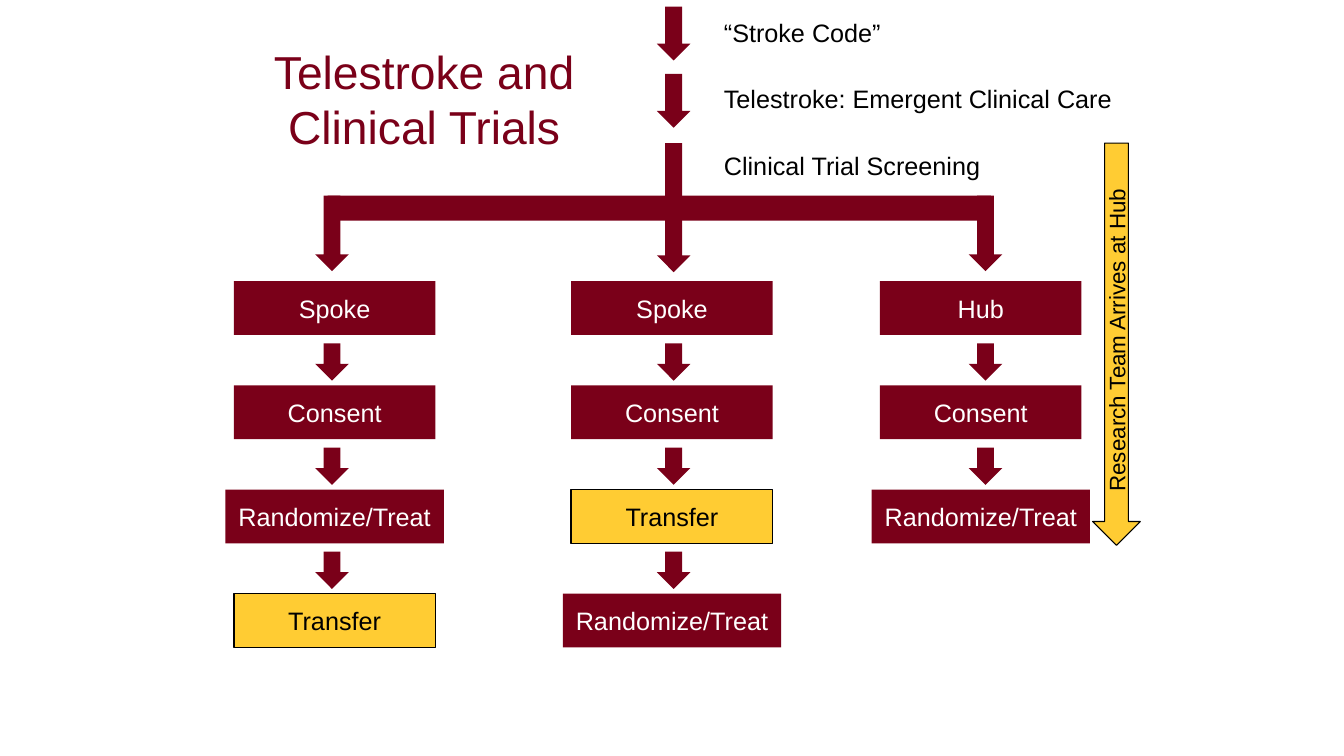
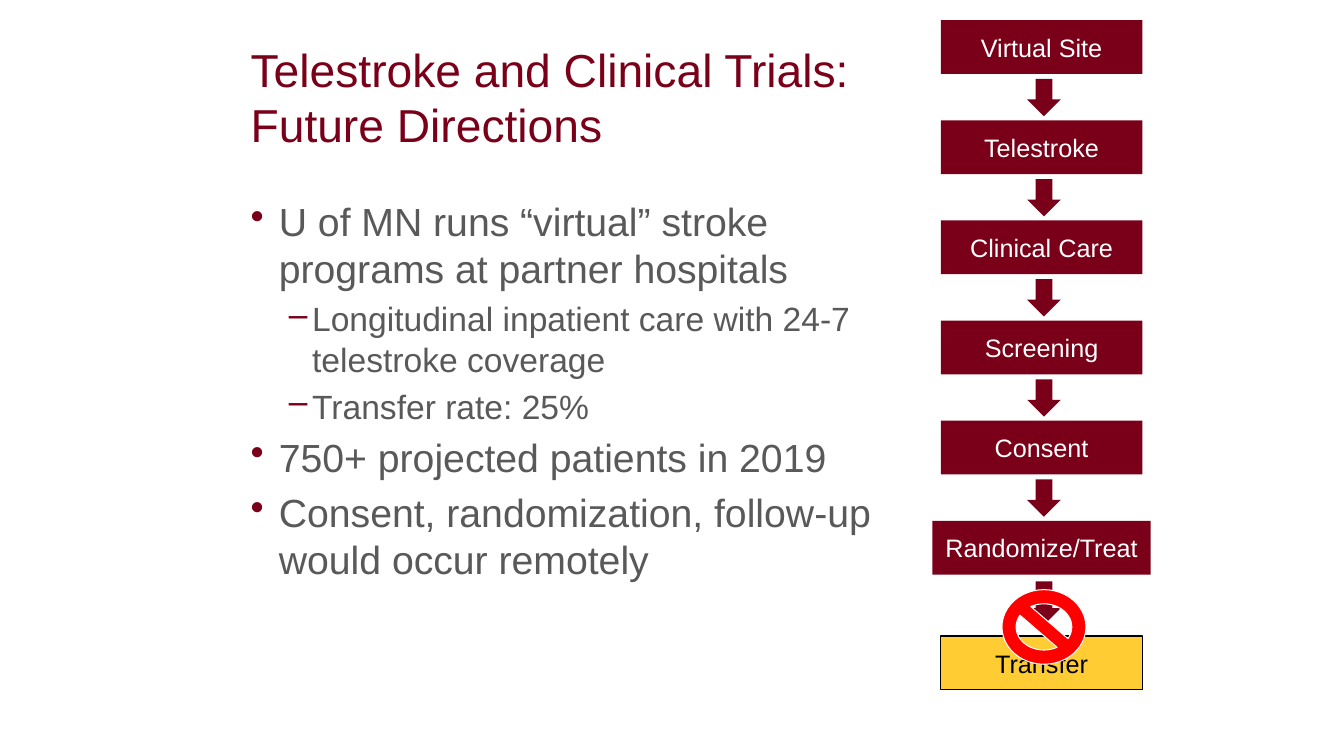
from lxml.etree import SubElement
from pptx import Presentation
from pptx.dml.color import RGBColor
from pptx.enum.shapes import MSO_SHAPE
from pptx.enum.text import MSO_ANCHOR, PP_ALIGN
from pptx.oxml.ns import qn
from pptx.util import Inches, Pt

RECT, DOWN, BAN = MSO_SHAPE.RECTANGLE, MSO_SHAPE.DOWN_ARROW, MSO_SHAPE.NO_SYMBOL
TOP, MIDDLE = MSO_ANCHOR.TOP, MSO_ANCHOR.MIDDLE
LEFT, CENTER = PP_ALIGN.LEFT, PP_ALIGN.CENTER

COLS = 40
CELL = Inches(1) // 3  # the grid has square cells, 40 across and 22.5 down
FONT = "Arial"
INK = {"maroon": "7A0019", "gold": "FFCC33", "black": "000000",
       "white": "FFFFFF", "gray": "595959", "red": "FF0000"}
BOX_H = 1.6
TITLE_X, TITLE_H = 7.25, 3.75
TIGHT, LOOSE = (0.07, 0.04), (0.1, 0.05)
# level: bullet, size, left margin, hanging indent
LEVELS = [("•", 28, 0.28, 0.28), ("–", 24, 0.61, 0.23)]


def rgb(name):
    return RGBColor.from_string(INK[name])


def cells(*nums):
    return [round(n * CELL) for n in nums]


def style(para, size, color, align=LEFT):
    para.alignment = align
    font = para.font
    font.name, font.size = FONT, Pt(size)
    font.color.rgb = rgb(color)


def frame(shape, anchor=MIDDLE, pad=TIGHT):
    body = shape.text_frame
    body.word_wrap = True
    body.vertical_anchor = anchor
    body.margin_left = body.margin_right = Inches(pad[0])
    body.margin_top = body.margin_bottom = Inches(pad[1])
    return body


def solid(slide, kind, area, fill, line=None, width=1):
    shape = slide.shapes.add_shape(kind, *cells(*area))
    shape.shadow.inherit = False
    shape.fill.solid()
    shape.fill.fore_color.rgb = rgb(fill)
    if line:
        shape.line.color.rgb = rgb(line)
        shape.line.width = Pt(width)
    else:
        shape.line.fill.background()
    return shape


def write(slide, area, text, size, color, align=LEFT, anchor=MIDDLE, pad=TIGHT):
    shape = slide.shapes.add_textbox(*cells(*area))
    para = frame(shape, anchor, pad).paragraphs[0]
    para.text = text
    style(para, size, color, align)
    return shape


def title(slide, top, width, text, align=LEFT):
    write(slide, (TITLE_X, top, width, TITLE_H), text, 33, "maroon", align)


def arrow(slide, mid, top, height):
    solid(slide, DOWN, (mid - 0.5, top, 1, height), "maroon")


def step(slide, mid, top, text):
    """Draw one step of a flow; a transfer stands out in gold."""
    width = 6.5 if len(text) > 13 else 6
    fill, line, ink = (("gold", "black", "black") if text == "Transfer"
                       else ("maroon", None, "white"))
    shape = solid(slide, RECT, (mid - width / 2, top, width, BOX_H), fill, line)
    para = frame(shape).paragraphs[0]
    para.text = text
    style(para, 18, ink, CENTER)


def flow(slide, mid, tip, top, pitch, drop, names):
    """Stack steps centred on mid, with arrows centred on tip between them."""
    for row, name in enumerate(names):
        y = top + row * pitch
        if row:
            arrow(slide, tip, y - pitch + drop, 1.11)
        step(slide, mid, y, name)


def intake(slide, tip, names):
    """Draw the arrows that lead into the fork, each with its label."""
    for row, (name, top, height) in enumerate(
            zip(names, (0.2, 2.2, 4.26), (1.6, 1.6, 3.84))):
        arrow(slide, tip, top, height)
        write(slide, (tip + 1.2, 0.36 + 1.98 * row, 13.25, 1.2), name, 18,
              "black", anchor=TOP, pad=LOOSE)


def fork(slide, first, last, top):
    solid(slide, RECT, (first - 0.13, top, last - first + 0.29, 0.75), "maroon")
    for tip in (first, last):
        arrow(slide, tip, top, 2.25)


def team(slide, left, top, width, height):
    solid(slide, DOWN, (left, top, width, height), "gold", "black", 0.75)
    long, deep = 11.25, 1.89
    area = (left + (width - long) / 2, top + (height - deep) / 2 - 0.12, long, deep)
    note = write(slide, area, "Research Team Arrives at Hub", 16, "black", CENTER)
    note.rotation = 270


def points(slide, area, items):
    body = frame(slide.shapes.add_textbox(*cells(*area)), TOP)
    for row, (level, text) in enumerate(items):
        mark, size, margin, hang = LEVELS[level]
        para = body.add_paragraph() if row else body.paragraphs[0]
        para.text = text
        para.level = level
        props = para._p.get_or_add_pPr()
        props.set("marL", str(Inches(margin)))
        props.set("indent", str(-Inches(hang)))
        tint = SubElement(props, qn("a:buClr"))
        SubElement(tint, qn("a:srgbClr"), val=INK["maroon"])
        SubElement(props, qn("a:buChar"), char=mark)
        if row:
            para.space_before = Pt(size * 0.2)
        style(para, size, "gray")


def trials(slide):
    mids, tips = (9.96, 20, 29.19), (9.88, 20.05, 29.33)
    paths = [
        ("Spoke", "Consent", "Randomize/Treat", "Transfer"),
        ("Spoke", "Consent", "Transfer", "Randomize/Treat"),
        ("Hub", "Consent", "Randomize/Treat"),
    ]
    intake(slide, tips[1], ("“Stroke Code”", "Telestroke: Emergent Clinical Care",
                            "Clinical Trial Screening"))
    fork(slide, tips[0], tips[2], 5.82)
    for mid, tip, names in zip(mids, tips, paths):
        flow(slide, mid, tip, 8.37, 3.1, 1.85, names)
    team(slide, 32.52, 4.26, 1.42, 11.97)
    title(slide, 1.05, 10.75, "Telestroke and Clinical Trials", CENTER)


def future(slide):
    mid, tip = 31, 31.07
    flow(slide, mid, tip, 0.6, 2.98, 1.75,
         ("Virtual Site", "Telestroke", "Clinical Care", "Screening", "Consent",
          "Randomize/Treat"))
    step(slide, mid, 18.93, "Transfer")
    arrow(slide, tip, 17.3, 1.3)
    ban = solid(slide, BAN, (tip - 1.25, 17.55, 2.5, 2.22), "red", "white", 0.75)
    ban.adjustments[0] = 0.19
    title(slide, 1, 22, "Telestroke and Clinical Trials: Future Directions")
    points(slide, (TITLE_X, 5.75, 20.25, 13), [
        (0, "U of MN runs “virtual” stroke programs at partner hospitals"),
        (1, "Longitudinal inpatient care with 24-7 telestroke coverage"),
        (1, "Transfer rate: 25%"),
        (0, "750+ projected patients in 2019"),
        (0, "Consent, randomization, follow-up would occur remotely"),
    ])


def main():
    deck = Presentation()
    deck.slide_width, deck.slide_height = COLS * CELL, Inches(7.5)
    for draw in (trials, future):
        draw(deck.slides.add_slide(deck.slide_layouts[6]))
    deck.save("out.pptx")


if __name__ == "__main__":
    main()
